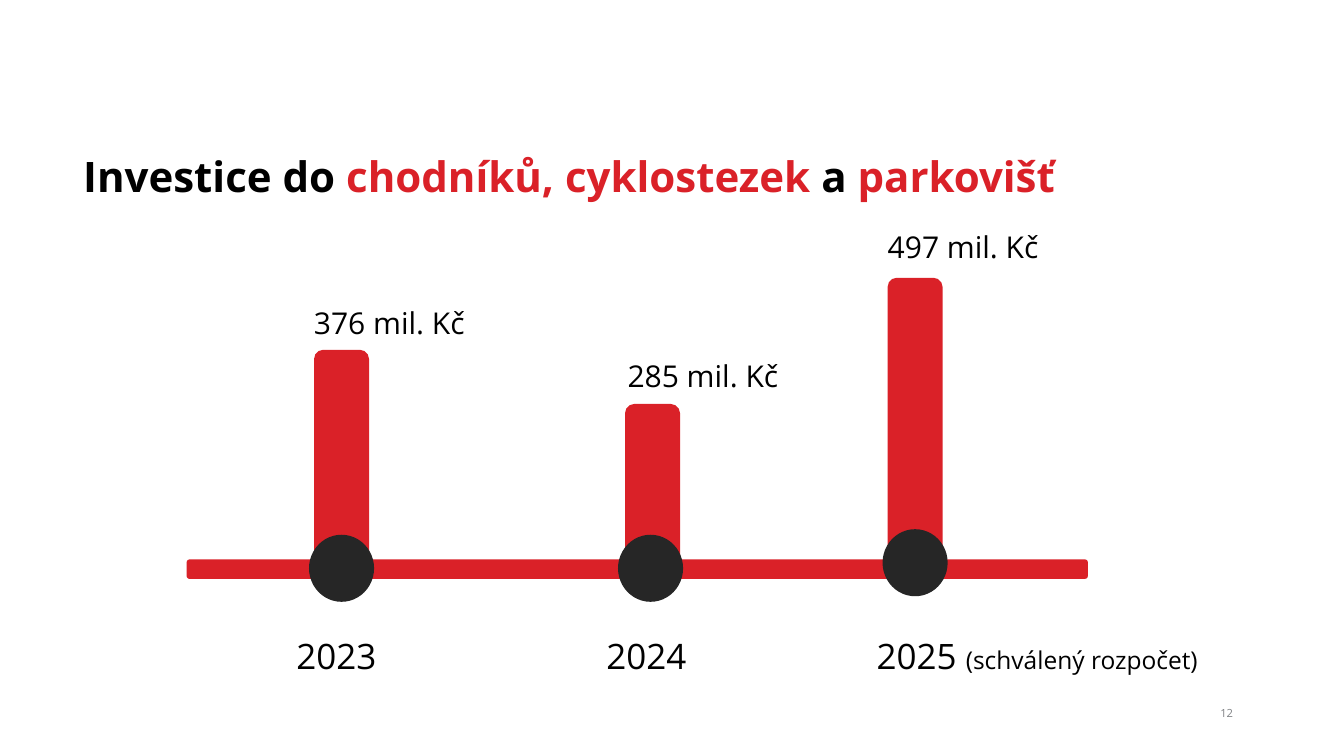
from collections import namedtuple

from pptx import Presentation
from pptx.dml.color import RGBColor
from pptx.enum import shapes, text
from pptx.util import Cm, Pt

FONT = "Open Sans"
RED = RGBColor(0xDA, 0x21, 0x28)
DARK = RGBColor(0x26, 0x26, 0x26)
BLACK = RGBColor(0, 0, 0)
GREY = RGBColor(0x80, 0x82, 0x85)

Box = namedtuple("Box", "left top width height")
# Horizontal places are measured from the left edge of the chart.
Year = namedtuple("Year", "name note value bar_mid knob_mid knob_top "
                          "label_left label_gap name_left name_width")

YEARS = [
    Year("2023", "", 376, 7.81, 7.81, 15.55, 6.17, 2.42, 5.28, 7.14),
    Year("2024", "", 285, 23.48, 23.38, 15.55, 21.97, 2.45, 20.9, 7.14),
    Year("2025 ", "(schválený rozpočet)", 497, 36.71, 36.71, 15.27,
         35.08, 2.6, 34.52, 19.99),
]
CM_PER_MILLION = 0.03
BAR_WIDTH = 2.77
BAR_BOTTOM = 17.51
AXIS_TOP, AXIS_HEIGHT = 16.79, 0.99
KNOB_WIDTH, KNOB_HEIGHT = 3.28, 3.38
NAME_TOP = 20.43


def place(box):
    return [Cm(length) for length in box]


def set_font(p, size, color, bold=False):
    p.font.name = FONT
    p.font.size = Pt(size)
    p.font.color.rgb = color
    p.font.bold = bold


def clear_margins(tf):
    tf.margin_left = tf.margin_top = tf.margin_right = tf.margin_bottom = 0


def add_solid(s, kind, box, color):
    sp = s.shapes.add_shape(kind, *place(box))
    sp.shadow.inherit = False
    sp.fill.solid()
    sp.fill.fore_color.rgb = color
    sp.line.fill.background()


def add_label(s, box, words, size, wrap=True):
    tf = s.shapes.add_textbox(*place(box)).text_frame
    tf.word_wrap = wrap
    tf.auto_size = text.MSO_AUTO_SIZE.SHAPE_TO_FIT_TEXT
    p = tf.paragraphs[0]
    p.add_run().text = words
    set_font(p, size, BLACK)
    return p


def add_title(s, box):
    title = s.shapes.title
    title.left, title.top, title.width, title.height = place(box)
    tf = title.text_frame
    clear_margins(tf)
    tf.word_wrap = True
    tf.vertical_anchor = text.MSO_ANCHOR.BOTTOM
    p = tf.paragraphs[0]
    p.alignment = text.PP_ALIGN.LEFT
    set_font(p, 60, BLACK, bold=True)
    for words, color in [("Investice do ", BLACK),
                         ("chodníků, cyklostezek ", RED),
                         ("a ", BLACK), ("parkovišť", RED)]:
        r = p.add_run()
        r.text = words
        r.font.color.rgb = color


def add_page_number(s, box, number):
    tf = s.shapes.add_textbox(*place(box)).text_frame
    clear_margins(tf)
    tf.word_wrap = True
    tf.vertical_anchor = text.MSO_ANCHOR.MIDDLE
    p = tf.paragraphs[0]
    p.text = str(number)
    p.alignment = text.PP_ALIGN.RIGHT
    set_font(p, 16, GREY)


def add_investment_timeline(s, box):
    """Bars scaled to the yearly amounts, standing on a line with knobs."""
    rounded = shapes.MSO_SHAPE.ROUNDED_RECTANGLE
    bar_bottom = box.top + BAR_BOTTOM
    for year in YEARS:
        height = year.value * CM_PER_MILLION
        add_solid(s, rounded,
                  Box(box.left + year.bar_mid - BAR_WIDTH / 2,
                      bar_bottom - height, BAR_WIDTH, height), RED)
    add_solid(s, rounded, Box(box.left, box.top + AXIS_TOP,
                              box.width, AXIS_HEIGHT), RED)
    for year in YEARS:
        add_solid(s, shapes.MSO_SHAPE.OVAL,
                  Box(box.left + year.knob_mid - KNOB_WIDTH / 2,
                      box.top + year.knob_top, KNOB_WIDTH, KNOB_HEIGHT), DARK)
    for year in YEARS:
        bar_top = bar_bottom - year.value * CM_PER_MILLION
        add_label(s, Box(box.left + year.label_left,
                         bar_top - year.label_gap, 8.81, 2.08),
                  f"{year.value} mil. Kč", 42.9, wrap=False)
        p = add_label(s, Box(box.left + year.name_left, box.top + NAME_TOP,
                             year.name_width, 2.39), year.name, 50)
        if year.note:
            r = p.add_run()
            r.text = year.note
            r.font.size = Pt(35)


def main():
    prs = Presentation()
    prs.slide_width, prs.slide_height = Cm(67.72), Cm(38.1)
    s = prs.slides.add_slide(prs.slide_layouts[5])
    add_title(s, Box(4.19, 4.85, 57.94, 5.28))
    add_page_number(s, Box(58.32, 34.9, 3.81, 2.03), 12)
    add_investment_timeline(s, Box(9.4, 11.4, 45.42, 22.82))
    prs.save("out.pptx")


if __name__ == "__main__":
    main()
